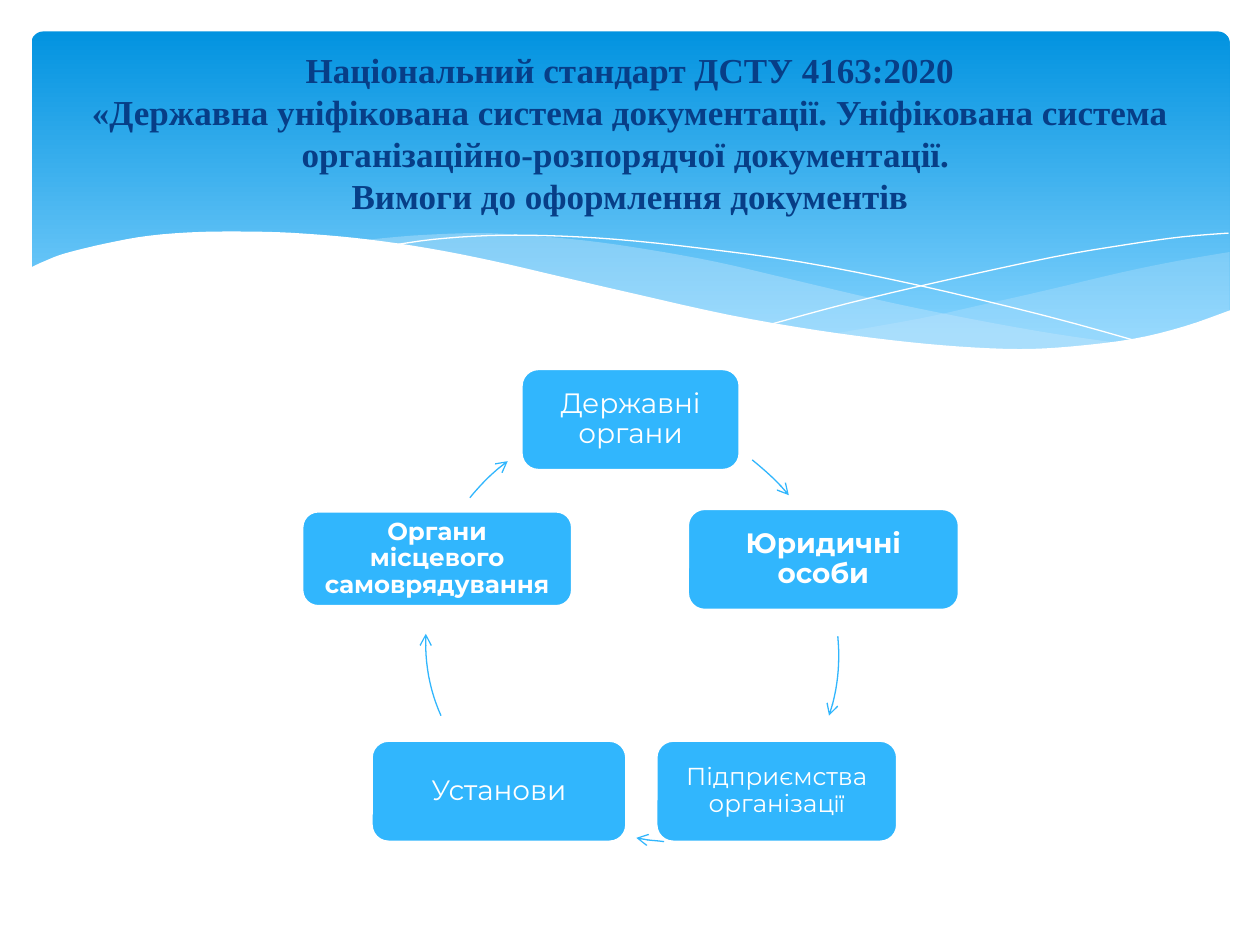
from lxml import etree
from pptx import Presentation
from pptx.dml.color import RGBColor
from pptx.enum.shapes import MSO_SHAPE as Shape
from pptx.enum.text import MSO_ANCHOR as Anchor, PP_ALIGN as Align
from pptx.oxml.ns import qn
from pptx.util import Inches, Pt

COLORS = {"top": "0293E0", "low": "83D3FE", "mist": "C6E7FC",
          "box": "31B6FD", "white": "FFFFFF", "title": "073E87"}

TITLE = ("Національний стандарт ДСТУ 4163:2020\v"
         " «Державна уніфікована система документації. Уніфікована система \v"
         "організаційно-розпорядчої документації. \v"
         "Вимоги до оформлення документів")

RIGHT_TOP = [(9.76, 2), (9.35, 2.07), (8.91, 2.16), (8.32, 2.3),
             (7.79, 2.42), (7.29, 2.53), (6.61, 2.65)]
RIGHT_LOW = [(6.61, 2.65), (7.05, 2.71), (7.57, 2.76), (8.14, 2.78),
             (8.63, 2.75), (9.05, 2.69), (9.42, 2.59), (9.76, 2.47)]
MID_TOP = [(8.93, 2.73), (8.37, 2.65), (7.75, 2.54), (7.06, 2.4),
           (6.29, 2.22), (5.69, 2.08), (5.14, 1.98), (4.65, 1.91),
           (4.2, 1.87), (3.8, 1.85), (3.28, 1.87), (2.86, 1.91)]
MID_LOW = [(2.86, 1.91), (3.42, 1.99), (4.04, 2.11), (4.49, 2.22),
           (5.3, 2.4), (6.01, 2.55), (6.65, 2.66), (7.22, 2.74),
           (7.73, 2.77), (8.18, 2.78), (8.57, 2.77), (8.93, 2.73)]
FRONT = [(9.77, 2.46), (9.4, 2.59), (8.99, 2.69), (8.5, 2.75),
         (8.09, 2.77), (7.61, 2.75), (7.08, 2.7), (6.48, 2.62),
         (5.79, 2.5), (5.03, 2.33), (4.47, 2.2), (3.91, 2.07),
         (3.4, 1.97), (2.92, 1.9), (2.5, 1.86), (2.11, 1.84),
         (1.61, 1.84), (1.19, 1.87), (0.85, 1.93), (0.52, 2.01),
         (0.36, 2.07), (0.23, 2.13)]
THREADS = [
    [(3.09, 1.95), (3.44, 1.9), (3.87, 1.87), (4.33, 1.87), (4.89, 1.9),
     (5.56, 1.97), (6.36, 2.08), (7.27, 2.26), (8.31, 2.51), (9.07, 2.72)],
    [(6.13, 2.57), (6.72, 2.41), (7.48, 2.23), (8.36, 2.04), (8.95, 1.94),
     (9.38, 1.88), (9.75, 1.85)],
]

# text runs, left, top, width, height, size, bold, inset
BOXES = [
    (["Державні органи"], 4.14, 2.93, 1.73, 0.8, 16, False, 0.11),
    (["Юридичні особи"], 5.46, 4.04, 2.15, 0.8, 16, True, 0.11),
    (["Підприємства організац", "ії"], 5.21, 5.88, 1.91, 0.8, 14, False, 0.1),
    (["Установи"], 2.95, 5.88, 2.02, 0.8, 16, False, 0.11),
    (["Органи місцевого самоврядування"],
     2.4, 4.06, 2.14, 0.75, 14, True, 0.08),
]
# start, two control points, end
ARROWS = [
    [(5.97, 3.65), (6.08, 3.74), (6.18, 3.83), (6.26, 3.93)],
    [(6.65, 5.05), (6.67, 5.26), (6.65, 5.48), (6.58, 5.68)],
    [(5.27, 6.68), (5.2, 6.67), (5.12, 6.67), (5.05, 6.65)],
    [(3.5, 5.68), (3.41, 5.48), (3.37, 5.26), (3.38, 5.03)],
    [(3.73, 3.95), (3.82, 3.84), (3.92, 3.74), (4.03, 3.66)],
]


def rgb(name):
    return RGBColor.from_string(COLORS[name])


def bezier(ctrl, steps):
    """Points along a cubic curve, both ends included."""
    out = []
    for i in range(steps + 1):
        t = i / steps
        u = 1 - t
        mix = (u ** 3, 3 * u * u * t, 3 * u * t * t, t ** 3)
        out.append(tuple(sum(m * p[k] for m, p in zip(mix, ctrl))
                         for k in (0, 1)))
    return out


def smooth(knots):
    """Points of a Catmull-Rom curve through the knots."""
    ext = [knots[0], *knots, knots[-1]]
    out = [knots[0]]
    for a, b, c, d in zip(ext, ext[1:], ext[2:], ext[3:]):
        one = tuple(b[k] + (c[k] - a[k]) / 6 for k in (0, 1))
        two = tuple(c[k] - (d[k] - b[k]) / 6 for k in (0, 1))
        out += bezier([b, one, two, c], 4)[1:]
    return out


def add_path(slide, pts, close):
    spots = [(Inches(x), Inches(y)) for x, y in pts]
    pen = slide.shapes.build_freeform(*spots[0])
    pen.add_line_segments(spots[1:], close=close)
    shape = pen.convert_to_shape()
    shape.shadow.inherit = False
    return shape


def add_wave(slide, pts, color, alpha=None):
    wave = add_path(slide, pts, True)
    wave.fill.solid()
    wave.fill.fore_color.rgb = rgb(color)
    wave.line.fill.background()
    if alpha:
        tint = wave._element.spPr.find(".//" + qn("a:srgbClr"))
        etree.SubElement(tint, qn("a:alpha"), val=str(alpha * 1000))


def add_curve(slide, pts, color, width, arrow=False):
    curve = add_path(slide, pts, False)
    curve.fill.background()
    curve.line.color.rgb = rgb(color)
    curve.line.width = Pt(width)
    if arrow:
        etree.SubElement(curve.line._get_or_add_ln(), qn("a:tailEnd"),
                         type="arrow")


def add_banner(slide):
    panel = slide.shapes.add_shape(Shape.ROUNDED_RECTANGLE, Inches(0.25),
                                   Inches(0.25), Inches(9.51), Inches(2.7))
    panel.adjustments[0] = 0.034
    panel.shadow.inherit = False
    panel.line.fill.background()
    panel.fill.gradient()
    panel.fill.gradient_angle = 270
    for stop, name, pos in zip(panel.fill.gradient_stops,
                               ("top", "low"), (0, 0.9)):
        stop.color.rgb = rgb(name)
        stop.position = pos
    add_wave(slide, smooth(RIGHT_TOP) + smooth(RIGHT_LOW), "mist", 29)
    add_wave(slide, smooth(MID_TOP) + smooth(MID_LOW), "mist", 40)
    for knots in THREADS:
        add_curve(slide, smooth(knots), "white", 0)
    add_wave(slide, smooth(FRONT) + [(0.23, 3.29), (9.77, 3.29)], "white")


def add_box(slide, runs, left, top, width, height, size, bold, inset):
    box = slide.shapes.add_shape(Shape.ROUNDED_RECTANGLE, Inches(left),
                                 Inches(top), Inches(width), Inches(height))
    box.shadow.inherit = False
    box.fill.solid()
    box.fill.fore_color.rgb = rgb("box")
    box.line.color.rgb = rgb("white")
    box.line.width = Pt(1.25)
    frame = box.text_frame
    frame.word_wrap = True
    frame.vertical_anchor = Anchor.MIDDLE
    frame.margin_left = frame.margin_right = Inches(inset)
    frame.margin_top = frame.margin_bottom = Inches(inset)
    para = frame.paragraphs[0]
    para.alignment = Align.CENTER
    para.line_spacing = 0.9
    for text, face in zip(runs, ("Montserrat", "TeX Gyre Adventor")):
        run = para.add_run()
        run.text = text
        font = run.font
        font.name, font.size, font.bold = face, Pt(size), bold
        font.color.rgb = rgb("white")


def add_title(slide):
    box = slide.shapes.add_textbox(Inches(0.5), Inches(0.37),
                                   Inches(9), Inches(1.37))
    frame = box.text_frame
    frame.word_wrap = True
    frame.vertical_anchor = Anchor.MIDDLE
    para = frame.paragraphs[0]
    para.text = TITLE
    para.alignment = Align.CENTER
    font = para.font
    font.name, font.size, font.bold = "Times New Roman", Pt(20), True
    font.color.rgb = rgb("title")


def main():
    deck = Presentation()
    deck.slide_width, deck.slide_height = Inches(10), Inches(7.5)
    slide = deck.slides.add_slide(deck.slide_layouts[6])
    add_banner(slide)
    for box, arrow in zip(BOXES, ARROWS):
        add_box(slide, *box)
        add_curve(slide, bezier(arrow, 12), "box", 0.75, arrow=True)
    add_title(slide)
    deck.save("out.pptx")


if __name__ == "__main__":
    main()
